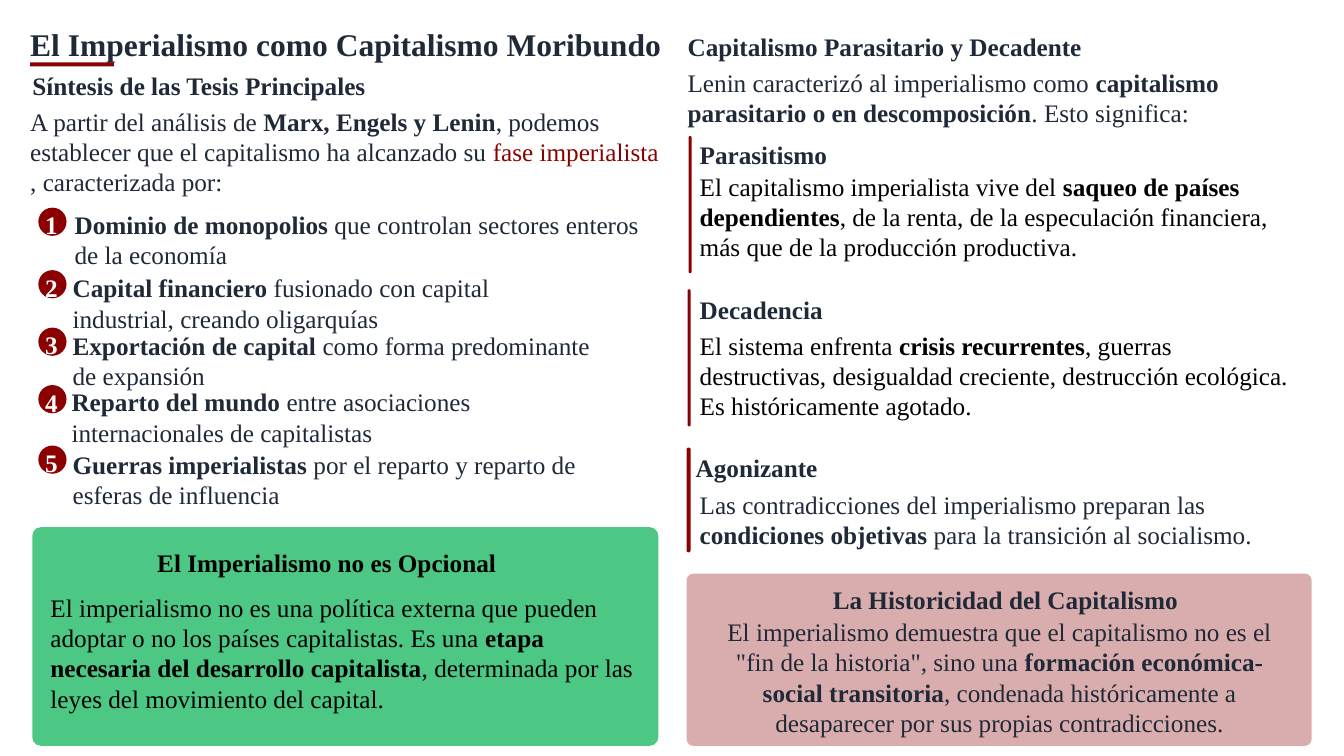
from lxml import etree
from pptx import Presentation
from pptx.dml.color import RGBColor
from pptx.enum.shapes import MSO_SHAPE
from pptx.enum.text import MSO_ANCHOR, PP_ALIGN
from pptx.oxml.ns import qn
from pptx.util import Inches, Pt

RECTANGLE = MSO_SHAPE.RECTANGLE
ROUNDED = MSO_SHAPE.ROUNDED_RECTANGLE
OVAL = MSO_SHAPE.OVAL
MIDDLE = MSO_ANCHOR.MIDDLE
LEFT, CENTER = PP_ALIGN.LEFT, PP_ALIGN.CENTER

DARK = RGBColor(0x1F, 0x29, 0x37)
RED = RGBColor(0x8B, 0x00, 0x00)
GREEN = RGBColor(0x00, 0xB0, 0x50)
BLACK = RGBColor(0x00, 0x00, 0x00)
WHITE = RGBColor(0xFF, 0xFF, 0xFF)

FONT = "Times New Roman"
BODY_SPACING = Pt(21.6)

presentation = Presentation()
presentation.slide_width = Inches(13.33)
presentation.slide_height = Inches(7.5)
slide = presentation.slides.add_slide(presentation.slide_layouts[6])


def add_text(box, text, color=DARK, spacing=BODY_SPACING, size=18, align=LEFT):
    """Add a text box; parts between ** marks are bold."""
    shape = slide.shapes.add_textbox(*(Inches(value) for value in box))
    frame = shape.text_frame
    frame.word_wrap = True
    frame.vertical_anchor = MIDDLE
    frame.margin_left = frame.margin_right = 0
    frame.margin_top = frame.margin_bottom = 0
    paragraph = frame.paragraphs[0]
    paragraph.alignment = align
    paragraph.line_spacing = spacing
    for index, part in enumerate(text.split("**")):
        if part:
            run = paragraph.add_run()
            run.text = part
            run.font.name = FONT
            run.font.size = Pt(size)
            run.font.bold = index % 2 == 1
            run.font.color.rgb = color
    return paragraph


def add_block(kind, box, color, corner=None, opacity=100):
    """Add a filled shape without outline."""
    shape = slide.shapes.add_shape(kind, *(Inches(value) for value in box))
    shape.shadow.inherit = False
    shape.fill.solid()
    shape.fill.fore_color.rgb = color
    shape.line.fill.background()
    if corner is not None:
        shape.adjustments[0] = corner
    if opacity < 100:
        fill_color = shape.fill._xPr.find(qn("a:solidFill"))[0]
        alpha = etree.SubElement(fill_color, qn("a:alpha"))
        alpha.set("val", str(opacity * 1000))


# Title with its short underline
add_text((0.3, 0.28, 12.8, 0.35), "**El Imperialismo como Capitalismo Moribundo**",
         spacing=0.9, size=22.5)
add_block(RECTANGLE, (0.3, 0.62, 0.83, 0.04), RED)

# Left column: introduction
add_text((0.32, 0.69, 6.32, 0.28), "**Síntesis de las Tesis Principales**", spacing=1.1)
introduction = add_text(
    (0.3, 1.09, 6.28, 0.83),
    "A partir del análisis de **Marx, Engels y Lenin**, podemos establecer que el "
    "capitalismo ha alcanzado su **fase imperialista **, caracterizada por:")
phase_run = introduction.runs[3]
phase_run.font.bold = False
phase_run.font.color.rgb = RED

# Left column: numbered theses (badge top, text box, text)
theses = [
    (2.06, (0.74, 2.04, 5.62, 0.67),
     "**Dominio de monopolios** que controlan sectores enteros de la economía"),
    (2.68, (0.72, 2.67, 4.32, 0.67),
     "**Capital financiero** fusionado con capital industrial, creando oligarquías"),
    (3.25, (0.72, 3.28, 5.15, 0.59),
     "**Exportación de capital** como forma predominante de expansión"),
    (3.82, (0.71, 3.84, 4.18, 0.59),
     "**Reparto del mundo** entre asociaciones internacionales de capitalistas"),
    (4.42, (0.72, 4.46, 5.15, 0.59),
     "**Guerras imperialistas** por el reparto y reparto de esferas de influencia"),
]
for number, (badge_top, box, text) in enumerate(theses, start=1):
    add_block(OVAL, (0.38, badge_top, 0.28, 0.28), RED)
    add_text((0.34, badge_top, 0.34, 0.28), f"**{number}**", WHITE, 1.2, align=CENTER)
    add_text(box, text)

# Left column: green panel
add_block(ROUNDED, (0.32, 5.23, 6.21, 2.17), GREEN, corner=0.04, opacity=70)
add_text((1.56, 5.38, 3.54, 0.31), "**El Imperialismo no es Opcional**", BLACK, 1.3)
add_text((0.5, 5.82, 5.85, 1.31),
         "El imperialismo no es una política externa que pueden adoptar o no los países "
         "capitalistas. Es una **etapa necesaria del desarrollo capitalista**, "
         "determinada por las leyes del movimiento del capital.", BLACK)

# Right column: introduction
add_text((6.82, 0.31, 6.32, 0.28), "**Capitalismo Parasitario y Decadente**", spacing=1.1)
add_text((6.82, 0.69, 6.28, 0.56),
         "Lenin caracterizó al imperialismo como **capitalismo parasitario o en "
         "descomposición**. Esto significa:")

# Right column: features (bar, heading position, heading, text box, colour, text)
features = [
    ((6.83, 1.35, 0.03, 1.36), (6.94, 1.38), "Parasitismo",
     (6.94, 1.67, 5.97, 0.95), BLACK,
     "El capitalismo imperialista vive del **saqueo de países dependientes**, de la "
     "renta, de la especulación financiera, más que de la producción productiva."),
    ((6.82, 2.87, 0.03, 1.36), (6.94, 2.92), "Decadencia",
     (6.94, 3.25, 5.97, 0.95), BLACK,
     "El sistema enfrenta **crisis recurrentes**, guerras destructivas, desigualdad "
     "creciente, destrucción ecológica. Es históricamente agotado."),
    ((6.81, 4.44, 0.04, 1.04), (6.9, 4.49), "Agonizante",
     (6.94, 4.83, 5.97, 0.65), DARK,
     "Las contradicciones del imperialismo preparan las **condiciones objetivas** "
     "para la transición al socialismo."),
]
for bar, heading_position, heading, box, color, text in features:
    add_block(ROUNDED, bar, RED, corner=0.5)
    add_text((*heading_position, 5.97, 0.21), f"**{heading}**", spacing=1.3)
    add_text(box, text, color)

# Right column: red panel
add_block(ROUNDED, (6.81, 5.69, 6.2, 1.71), RED, corner=0.04, opacity=32)
add_text((8.26, 5.8, 5.97, 0.21), "**La Historicidad del Capitalismo**", spacing=1.3)
add_text((7.05, 6.07, 5.73, 1.29),
         'El imperialismo demuestra que el capitalismo no es el "fin de la historia", '
         "sino una **formación económica-social transitoria**, condenada "
         "históricamente a desaparecer por sus propias contradicciones.", align=CENTER)

presentation.save("out.pptx")
